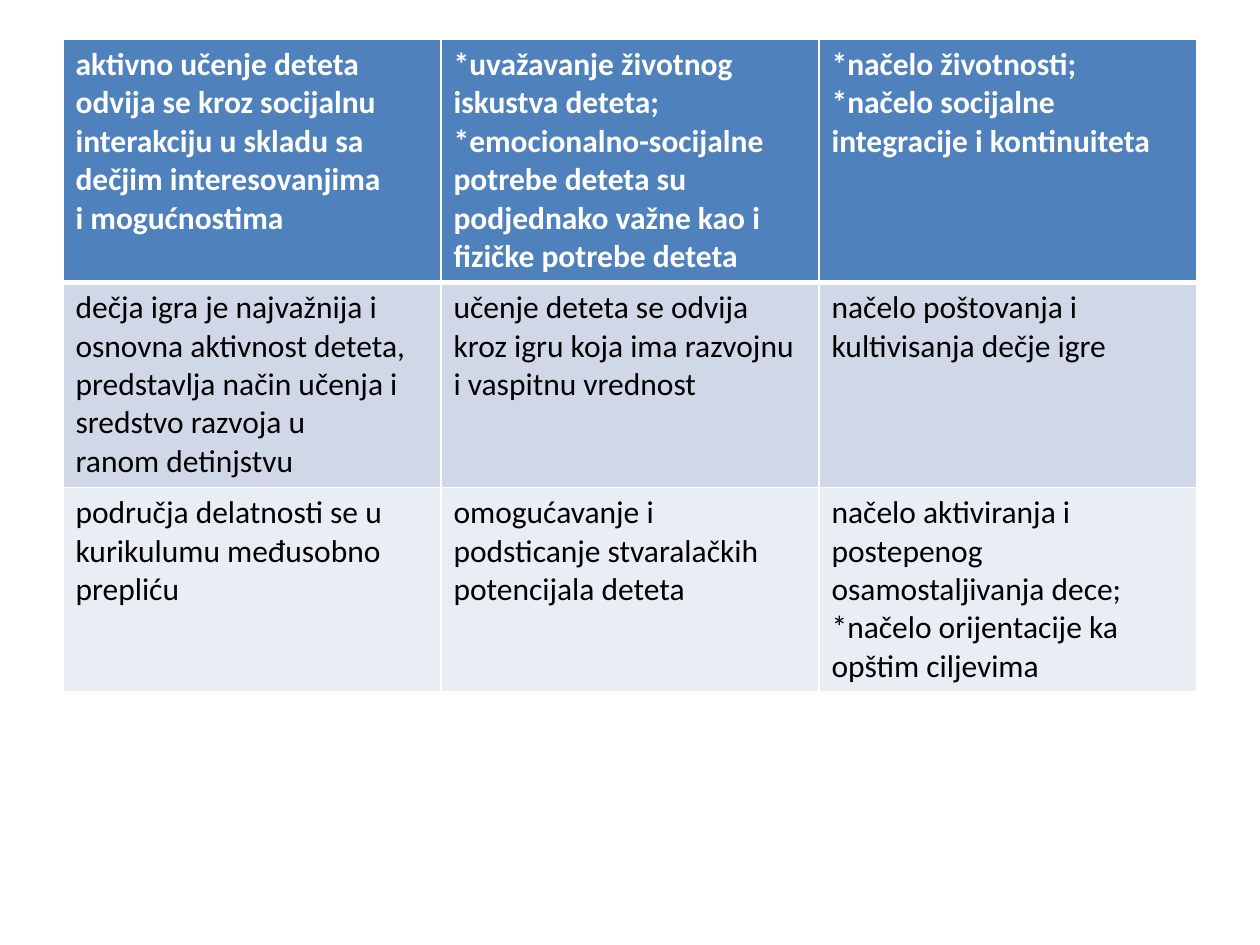
import dataclasses

import lxml.etree
import pptx
import pptx.dml.color
import pptx.oxml.ns
import pptx.util

PX = pptx.util.Inches(1) / 126


@dataclasses.dataclass(frozen=True)
class Theme:
    font: str = "Calibri"
    text_size: int = 18
    header_text: str = "FFFFFF"
    body_text: str = "000000"
    border: str = "FFFFFF"
    header_fill: str = "4F81BD"
    band_fills: tuple = ("D0D8E8", "E9EDF4")
    thin_line: int = 1
    header_line: int = 3


def px(length):
    return pptx.util.Emu(round(length * PX))


def rgb(value):
    return pptx.dml.color.RGBColor.from_string(value)


class SlideBuilder:
    def __init__(self, slide, theme):
        self.slide = slide
        self.theme = theme

    def add_table(self, left, top, column_width, row_heights, rows):
        """Add a table with a header row and alternating body fills."""
        column_count = len(rows[0])
        frame = self.slide.shapes.add_table(
            len(rows), column_count, px(left), px(top),
            px(column_width * column_count), px(sum(row_heights)))
        table = frame.table
        for column in table.columns:
            column.width = px(column_width)
        for row_index, (height, texts) in enumerate(zip(row_heights, rows)):
            table.rows[row_index].height = px(height)
            for column_index, text in enumerate(texts):
                self.format_cell(table.cell(row_index, column_index), text, row_index)

    def format_cell(self, cell, text, row_index):
        theme = self.theme
        is_header = row_index == 0
        widths = {
            "lnL": theme.thin_line,
            "lnR": theme.thin_line,
            "lnT": theme.header_line if row_index == 1 else theme.thin_line,
            "lnB": theme.header_line if is_header else theme.thin_line,
        }
        for side, width in widths.items():
            self.add_border(cell, side, width)
        bands = theme.band_fills
        cell.fill.solid()
        cell.fill.fore_color.rgb = rgb(
            theme.header_fill if is_header else bands[(row_index - 1) % len(bands)])
        cell.text = text
        font_format = {
            "name": theme.font,
            "size": pptx.util.Pt(theme.text_size),
            "bold": is_header,
        }
        for paragraph in cell.text_frame.paragraphs:
            for run in paragraph.runs:
                for name, value in font_format.items():
                    setattr(run.font, name, value)
                run.font.color.rgb = rgb(
                    theme.header_text if is_header else theme.body_text)

    def add_border(self, cell, side, width):
        qn = pptx.oxml.ns.qn
        properties = cell._tc.get_or_add_tcPr()
        line = lxml.etree.SubElement(
            properties, qn(f"a:{side}"), w=str(pptx.util.Pt(width)))
        fill = lxml.etree.SubElement(line, qn("a:solidFill"))
        lxml.etree.SubElement(fill, qn("a:srgbClr"), val=self.theme.border)


PRINCIPLES = [
    [
        "aktivno učenje deteta odvija se kroz socijalnu interakciju u skladu sa "
        "dečjim interesovanjima\ni mogućnostima",
        "*uvažavanje životnog iskustva deteta;\n"
        "*emocionalno-socijalne potrebe deteta su podjednako važne kao i\n"
        "fizičke potrebe deteta",
        "*načelo životnosti;\n*načelo socijalne integracije i kontinuiteta",
    ],
    [
        "dečja igra je najvažnija i osnovna aktivnost deteta, predstavlja način "
        "učenja i sredstvo razvoja u\nranom detinjstvu",
        "učenje deteta se odvija kroz igru koja ima razvojnu i vaspitnu vrednost",
        "načelo poštovanja i kultivisanja dečje igre",
    ],
    [
        "područja delatnosti se u\nkurikulumu međusobno prepliću",
        "omogućavanje i podsticanje stvaralačkih potencijala deteta",
        "načelo aktiviranja i postepenog osamostaljivanja dece;\n"
        "*načelo orijentacije ka opštim ciljevima",
    ],
]


def main():
    presentation = pptx.Presentation()
    presentation.slide_width = px(1260)
    presentation.slide_height = px(945)
    blank_layout = presentation.slide_layouts[6]
    slide = presentation.slides.add_slide(blank_layout)
    builder = SlideBuilder(slide, Theme())
    builder.add_table(left=63, top=39, column_width=378,
                      row_heights=[243, 205, 204], rows=PRINCIPLES)
    presentation.save("out.pptx")


if __name__ == "__main__":
    main()
